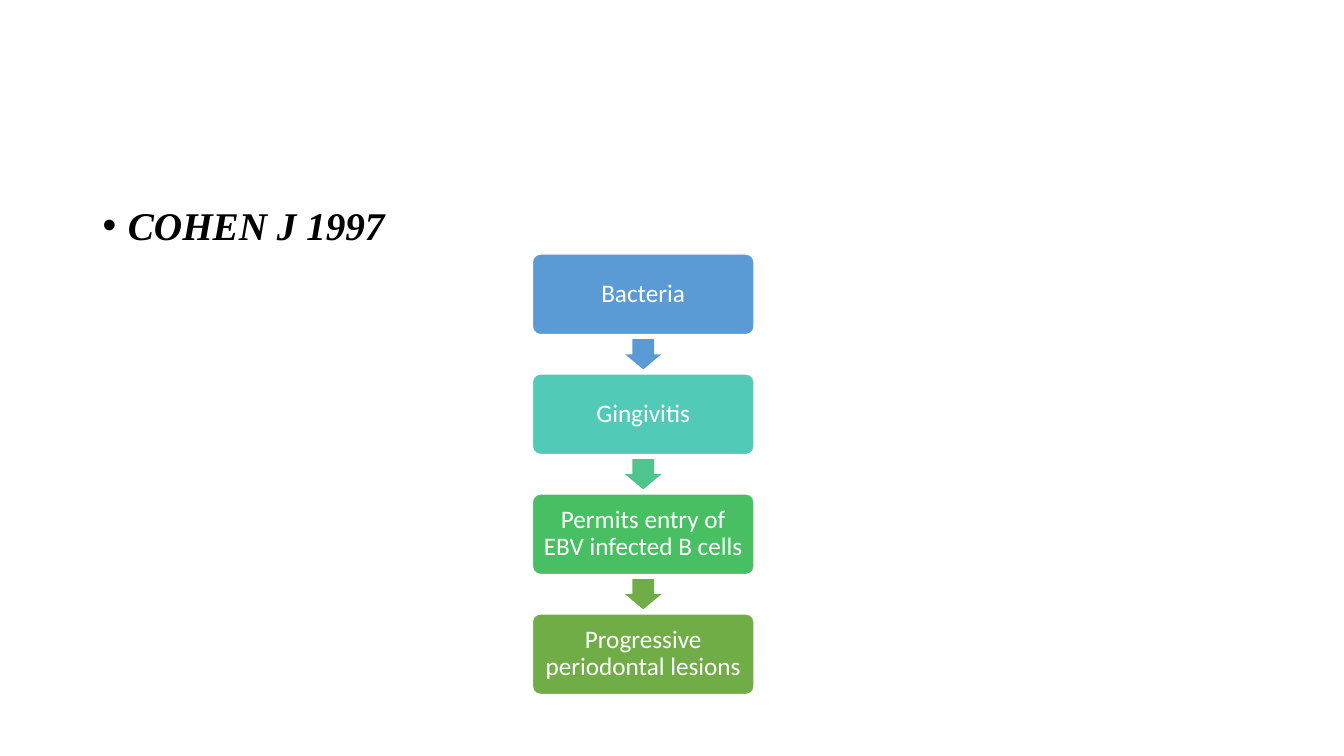
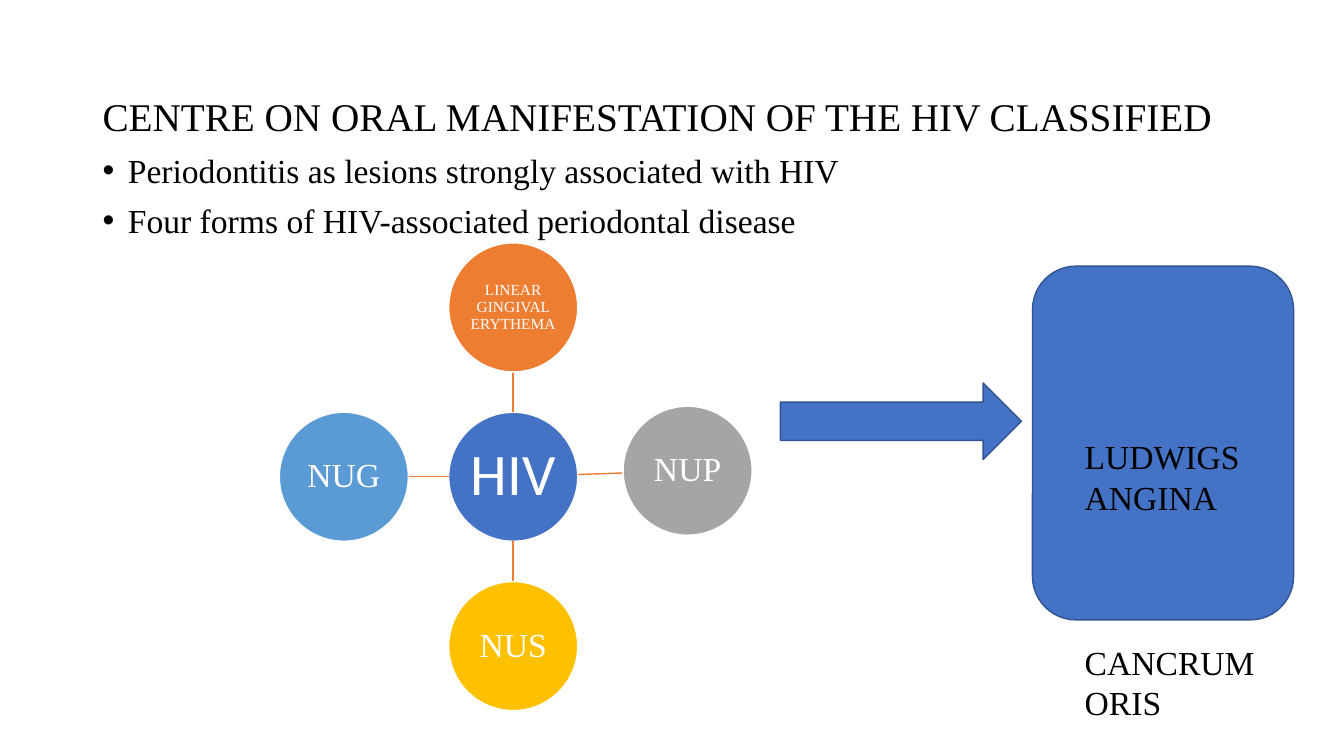
"""Build two slides on viral links to periodontal disease."""
from math import hypot

from lxml import etree
from pptx import Presentation
from pptx.dml.color import RGBColor
from pptx.enum.shapes import MSO_CONNECTOR, MSO_SHAPE
from pptx.enum.text import MSO_ANCHOR, PP_ALIGN
from pptx.oxml.ns import qn
from pptx.util import Inches, Pt

ROUND, OVAL = MSO_SHAPE.ROUNDED_RECTANGLE, MSO_SHAPE.OVAL
DOWN, RIGHT = MSO_SHAPE.DOWN_ARROW, MSO_SHAPE.RIGHT_ARROW
STRAIGHT = MSO_CONNECTOR.STRAIGHT
MIDDLE, TOP = MSO_ANCHOR.MIDDLE, MSO_ANCHOR.TOP
CENTER = PP_ALIGN.CENTER

BLACK = RGBColor(0x00, 0x00, 0x00)
WHITE = RGBColor(0xFF, 0xFF, 0xFF)
BLUE = RGBColor(0x44, 0x72, 0xC4)
NAVY = RGBColor(0x32, 0x54, 0x91)
SKY = RGBColor(0x5B, 0x9B, 0xD5)
TEAL = RGBColor(0x52, 0xCA, 0xB8)
MINT = RGBColor(0x4D, 0xC5, 0x8D)
GREEN = RGBColor(0x49, 0xBF, 0x64)
OLIVE = RGBColor(0x70, 0xAD, 0x47)
ORANGE = RGBColor(0xED, 0x7D, 0x31)
GRAY = RGBColor(0xA5, 0xA5, 0xA5)
GOLD = RGBColor(0xFF, 0xC0, 0x00)

SERIF, SANS = "Times New Roman", "Calibri"

CITATION = [("COHEN J 1997", True, {"size": Pt(28), "bold": True, "italic": True})]
STAGES = [
    ("Bacteria", SKY),
    ("Gingivitis", TEAL),
    ("Permits entry of EBV infected B cells", GREEN),
    ("Progressive periodontal lesions", OLIVE),
]
ARROW_COLORS = [SKY, MINT, OLIVE]

FINDINGS = [
    ("CENTRE ON ORAL MANIFESTATION OF THE HIV CLASSIFIED", False, {"size": Pt(28)}),
    ("Periodontitis as lesions strongly associated with HIV", True, {"size": Pt(24)}),
    ("Four forms of HIV-associated periodontal disease", True, {"size": Pt(24)}),
]
HUB = ("HIV", BLUE, 5.09, 4.73, SANS, 42)
FORMS = [
    ("LINEAR GINGIVAL ERYTHEMA", ORANGE, 5.09, 3.05, SERIF, 11),
    ("NUP", GRAY, 6.82, 4.67, SERIF, 24),
    ("NUS", GOLD, 5.09, 6.41, SERIF, 24),
    ("NUG", SKY, 3.41, 4.73, SERIF, 24),
]
RADIUS = 0.64
OUTCOMES = [("LUDWIGS ANGINA", 0), ("CANCRUM ORIS", 89)]


def add_run(p, text, **font):
    r = p.add_run()
    r.text = text
    color = font.pop("color", BLACK)
    for name, value in font.items():
        setattr(r.font, name, value)
    r.font.color.rgb = color


def add_box(s, left, top, width, height):
    tf = s.shapes.add_textbox(*map(Inches, (left, top, width, height))).text_frame
    tf.word_wrap = True
    tf.vertical_anchor = TOP
    return tf


def add_body(s, top, height, lines):
    tf = add_box(s, 0.92, top, 11.5, height)
    for i, (text, bullet, font) in enumerate(lines):
        p = tf.add_paragraph() if i else tf.paragraphs[0]
        p.line_spacing = 0.9
        p.space_before = Pt(10 if i else 0)
        if bullet:
            pPr = p._p.get_or_add_pPr()
            pPr.set("marL", str(Inches(0.25)))
            pPr.set("indent", str(-Inches(0.25)))
            etree.SubElement(pPr, qn("a:buFont")).set("typeface", "Arial")
            etree.SubElement(pPr, qn("a:buChar")).set("char", "•")
        add_run(p, text, name=SERIF, **font)


def add_shape(s, kind, left, top, width, height, fill, line=None, adj=()):
    sp = s.shapes.add_shape(kind, *map(Inches, (left, top, width, height)))
    sp.shadow.inherit = False
    sp.fill.solid()
    sp.fill.fore_color.rgb = fill
    if line is None:
        sp.line.fill.background()
    else:
        sp.line.color.rgb = line
        sp.line.width = Pt(1)
    for i, value in enumerate(adj):
        sp.adjustments[i] = value
    return sp


def add_label(sp, text, font, size, inset):
    tf = sp.text_frame
    tf.word_wrap = True
    tf.vertical_anchor = MIDDLE
    for side in ("left", "top", "right", "bottom"):
        setattr(tf, f"margin_{side}", Inches(inset))
    p = tf.paragraphs[0]
    p.alignment = CENTER
    p.line_spacing = 0.9
    add_run(p, text, name=font, size=Pt(size), color=WHITE)


def add_circle(s, text, fill, x, y, font, size):
    sp = add_shape(s, OVAL, x - RADIUS, y - RADIUS, 2 * RADIUS, 2 * RADIUS, fill, WHITE)
    add_label(sp, text, font, size, 0.01)


def add_spoke(s, x1, y1, x2, y2):
    length = hypot(x2 - x1, y2 - y1)
    dx, dy = RADIUS * (x2 - x1) / length, RADIUS * (y2 - y1) / length
    ends = (x1 + dx, y1 + dy, x2 - dx, y2 - dy)
    c = s.shapes.add_connector(STRAIGHT, *map(Inches, ends))
    c.line.color.rgb = ORANGE
    c.line.width = Pt(1)
    etree.SubElement(c._element.spPr, qn("a:effectLst"))


def build_pathway(s):
    add_body(s, 2, 4.76, CITATION)
    left, top, width, height, gap = 5.28, 2.52, 2.2, 0.8, 0.39
    arrow_w, arrow_h = 0.36, 0.3
    for i, (text, fill) in enumerate(STAGES):
        y = top + i * (height + gap)
        sp = add_shape(s, ROUND, left, y, width, height, fill, WHITE, [0.1])
        add_label(sp, text, SANS, 18, 0.07)
        if i < len(ARROW_COLORS):
            add_shape(s, DOWN, left + (width - arrow_w) / 2,
                      y + height + (gap - arrow_h) / 2,
                      arrow_w, arrow_h, ARROW_COLORS[i], adj=[0.6, 0.5])


def build_hiv_forms(s):
    add_body(s, 0.92, 5.83, FINDINGS)
    add_circle(s, *HUB)
    for form in FORMS:
        add_spoke(s, *HUB[2:4], *form[2:4])
        add_circle(s, *form)
    add_shape(s, RIGHT, 7.74, 3.8, 2.39, 0.76, BLUE, NAVY)
    add_shape(s, ROUND, 10.24, 2.64, 2.59, 3.51, BLUE, NAVY)
    tf = add_box(s, 10.66, 4.28, 2.17, 2.85)
    for i, (text, before) in enumerate(OUTCOMES):
        p = tf.add_paragraph() if i else tf.paragraphs[0]
        p.space_before = Pt(before)
        add_run(p, text, name=SERIF, size=Pt(24))


def main():
    prs = Presentation()
    prs.slide_width, prs.slide_height = Inches(13.33), Inches(7.5)
    for build in (build_pathway, build_hiv_forms):
        build(prs.slides.add_slide(prs.slide_layouts[6]))
    prs.save("out.pptx")


if __name__ == "__main__":
    main()
